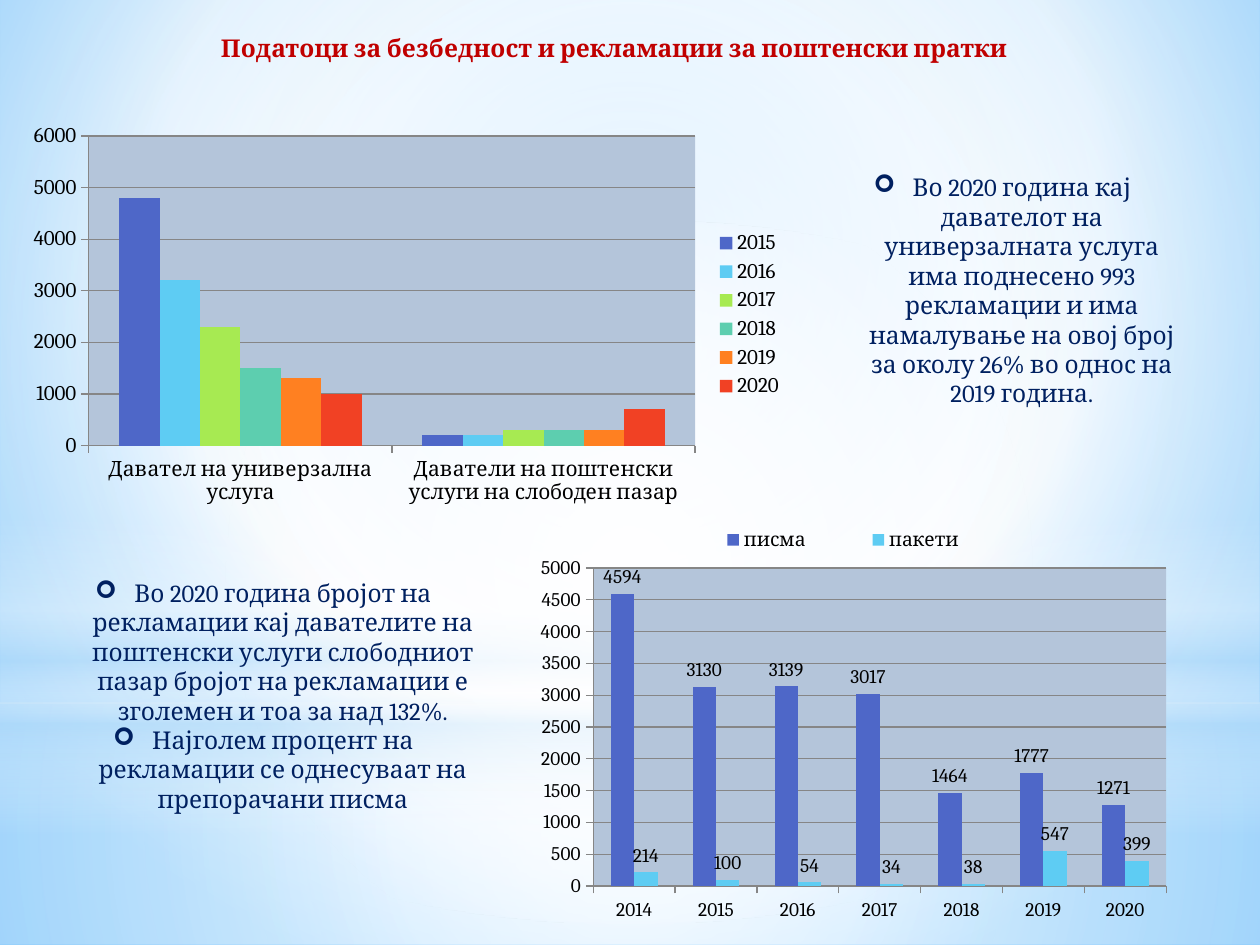
from lxml import etree
from pptx import Presentation
from pptx.chart.data import CategoryChartData
from pptx.dml.color import RGBColor
from pptx.enum.chart import XL_CHART_TYPE, XL_LABEL_POSITION, XL_LEGEND_POSITION, XL_TICK_MARK
from pptx.enum.shapes import MSO_SHAPE
from pptx.enum.text import PP_ALIGN
from pptx.oxml import parse_xml
from pptx.oxml.ns import qn
from pptx.util import Inches, Pt

COLUMNS = XL_CHART_TYPE.COLUMN_CLUSTERED
RECT, OVAL = MSO_SHAPE.RECTANGLE, MSO_SHAPE.OVAL
RIGHT, TOP = XL_LEGEND_POSITION.RIGHT, XL_LEGEND_POSITION.TOP
OUTSIDE = XL_LABEL_POSITION.OUTSIDE_END
TICK_OUT, TICK_NONE = XL_TICK_MARK.OUTSIDE, XL_TICK_MARK.NONE
CENTER = PP_ALIGN.CENTER
A = "http://schemas.openxmlformats.org/drawingml/2006/main"
P = "http://schemas.openxmlformats.org/presentationml/2006/main"

WIDTH, HEIGHT = 10, 7.5
THEME = {
    "font": "Cambria", "body_size": 14,
    "title": "C00000", "body": "002060", "chart_text": "000000",
    "plot": "B4C5DA", "line": "868686",
    "series": ["4E67C8", "5ECCF3", "A7EA52", "5DCEAF", "FF8021", "F14124"],
}

BACKDROP = dict(stops=[(0, "9ED5FF", 100), (60, "FFFFFF", 100), (100, "5BB9FF", 100)],
                focus=(20, 10, 20, 60))
MIDDLE = (50, 50, 50, 50)
GLOWS = [
    (RECT, (0, 74.4, 100, 25.6), dict(
        stops=[(0, "FFFFFF", 91), (37, "FFFFFF", 76), (100, "B4DCFA", 79)], focus=MIDDLE)),
    (RECT, (0, 0, 100, 74.4), dict(
        stops=[(0, "FFFFFF", 89), (48, "FFFFFF", 62), (100, "B4DCFA", 79)], focus=MIDDLE)),
    (RECT, (0, 54.9, 100, 33.3), dict(
        stops=[(0, "FFFFFF", 0), (29, "FFFFFF", 30), (45, "B4DCFA", 40),
               (55, "FFFFFF", 26), (65, "B4DCFA", 60), (100, "FFFFFF", 0)], angle=90)),
    (OVAL, (0, 23.3, 100, 74.4), dict(
        stops=[(0, "FFFFFF", 100), (56, "FFFFFF", 0)], focus=MIDDLE)),
]

TITLE = "Податоци за безбедност и рекламации за поштенски пратки"
UNIVERSAL_NOTE = [
    "Во 2020 година кај давателот на универзалната услуга има поднесено 993 рекламации "
    "и има намалување на овој број за околу 26% во однос на 2019 година.",
]
MARKET_NOTES = [
    "Во 2020 година бројот на рекламации кај давателите на поштенски услуги слободниот "
    "пазар бројот на рекламации е зголемен и тоа за над 132%.",
    "Најголем процент на рекламации се однесуваат на препорачани писма",
]
COMPLAINTS_BY_PROVIDER = {
    "categories": ["Давател на универзална услуга", "Даватели на поштенски услуги на слободен пазар"],
    "series": {"2015": (4800, 200), "2016": (3200, 200), "2017": (2300, 300),
               "2018": (1500, 300), "2019": (1300, 300), "2020": (1000, 700)},
}
COMPLAINTS_BY_ITEM = {
    "categories": [str(year) for year in range(2014, 2021)],
    "series": {"писма": (4594, 3130, 3139, 3017, 1464, 1777, 1271),
               "пакети": (214, 100, 54, 34, 38, 547, 399)},
}


def place(area):
    sides = (WIDTH, HEIGHT, WIDTH, HEIGHT)
    return [Inches(share * side / 100) for share, side in zip(area, sides)]


def rgb(code):
    return RGBColor.from_string(code)


def gradient(stops, focus=None, angle=0):
    marks = "".join(
        f'<a:gs pos="{pos * 1000}"><a:srgbClr val="{color}">'
        f'<a:alpha val="{opacity * 1000}"/></a:srgbClr></a:gs>'
        for pos, color, opacity in stops)
    if focus:
        rect = " ".join(f'{side}="{share * 1000}"' for side, share in zip("ltrb", focus))
        course = f'<a:path path="circle"><a:fillToRect {rect}/></a:path>'
    else:
        course = f'<a:lin ang="{angle * 60000}" scaled="0"/>'
    return f'<a:gradFill xmlns:a="{A}" rotWithShape="1"><a:gsLst>{marks}</a:gsLst>{course}</a:gradFill>'


def paint_background(slide, fill):
    slide.element.cSld.insert(0, parse_xml(
        f'<p:bg xmlns:p="{P}" xmlns:a="{A}"><p:bgPr>{gradient(**fill)}<a:effectLst/></p:bgPr></p:bg>'))


def add_glow(slide, outline, area, fill):
    glow = slide.shapes.add_shape(outline, *place(area))
    glow.shadow.inherit = False
    glow.line.fill.background()
    glow.fill.background()
    blank = glow.element.spPr.find(qn("a:noFill"))
    blank.getparent().replace(blank, parse_xml(gradient(**fill)))


def add_text(slide, lines, area, color=THEME["body"], bold=False, bullet=None):
    frame = slide.shapes.add_textbox(*place(area)).text_frame
    frame.word_wrap = True
    for index, line in enumerate(lines):
        paragraph = frame.add_paragraph() if index else frame.paragraphs[0]
        paragraph.alignment = CENTER
        run = paragraph.add_run()
        run.text = line
        run.font.name, run.font.size = THEME["font"], Pt(THEME["body_size"])
        run.font.bold, run.font.color.rgb = bold, rgb(color)
        if bullet:
            props = paragraph._p.get_or_add_pPr()
            props.set("marL", str(Inches(0.31)))
            props.set("indent", str(Inches(-0.31)))
            etree.SubElement(props, qn("a:buFont")).set("typeface", "Wingdings")
            etree.SubElement(props, qn("a:buChar")).set("char", bullet)


def set_layout(holder, after, box, inner=False):
    for old in holder.findall(qn("c:layout")):
        holder.remove(old)
    layout = etree.Element(qn("c:layout"))
    manual = etree.SubElement(layout, qn("c:manualLayout"))
    rules = [("layoutTarget", "inner")] if inner else []
    rules += [("xMode", "edge"), ("yMode", "edge"), *zip("xywh", box)]
    for tag, value in rules:
        etree.SubElement(manual, qn(f"c:{tag}")).set("val", str(value))
    if after is None:
        holder.insert(0, layout)
    else:
        after.addnext(layout)


def add_columns(slide, content, area, size, top, step, plot, legend, legend_box=None, labels=False):
    data = CategoryChartData(number_format="0")
    data.categories = content["categories"]
    for name, values in content["series"].items():
        data.add_series(name, values)
    chart = slide.shapes.add_chart(COLUMNS, *place(area), data).chart
    chart.has_title = False
    chart.font.name, chart.font.size = THEME["font"], Pt(size)
    chart.font.color.rgb = rgb(THEME["chart_text"])

    chart.has_legend = True
    chart.legend.position = legend
    chart.legend.include_in_layout = False
    if legend_box:
        box = chart.legend._element
        set_layout(box, box.find(qn("c:legendPos")), legend_box)

    scale = chart.value_axis
    scale.minimum_scale, scale.maximum_scale, scale.major_unit = 0, top, step
    scale.has_major_gridlines = True
    scale.major_gridlines.format.line.color.rgb = rgb(THEME["line"])
    for axis in (scale, chart.category_axis):
        axis.major_tick_mark, axis.minor_tick_mark = TICK_OUT, TICK_NONE
        axis.format.line.color.rgb = rgb(THEME["line"])

    columns = chart.plots[0]
    columns.gap_width, columns.overlap, columns.vary_by_categories = 150, 0, False
    for series, color in zip(columns.series, THEME["series"]):
        series.format.fill.solid()
        series.format.fill.fore_color.rgb = rgb(color)
        series.smooth = False if hasattr(series, "smooth") else None
    if labels:
        columns.has_data_labels = True
        columns.data_labels.show_value = True
        columns.data_labels.position = OUTSIDE

    plot_area = chart._chartSpace.chart.plotArea
    set_layout(plot_area, None, plot, inner=True)
    plot_area.append(parse_xml(
        f'<c:spPr xmlns:c="http://schemas.openxmlformats.org/drawingml/2006/chart" xmlns:a="{A}">'
        f'<a:solidFill><a:srgbClr val="{THEME["plot"]}"/></a:solidFill></c:spPr>'))


def main():
    deck = Presentation()
    deck.slide_width, deck.slide_height = Inches(WIDTH), Inches(HEIGHT)
    slide = deck.slides.add_slide(deck.slide_layouts[6])
    paint_background(slide, BACKDROP)
    for outline, area, fill in GLOWS:
        add_glow(slide, outline, area, fill)
    add_text(slide, [TITLE], (1.5, 2.8, 94.5, 4.5), color=THEME["title"], bold=True)
    add_columns(slide, COMPLAINTS_BY_PROVIDER, (1.5, 12.3, 61.7, 42), size=12, top=6000, step=1000,
                plot=(0.09, 0.05, 0.78, 0.78), legend=RIGHT)
    add_text(slide, UNIVERSAL_NOTE, (64.2, 17.6, 30.7, 26.5), bullet="➢")
    add_text(slide, MARKET_NOTES, (2.8, 60.5, 36.2, 26.5), bullet="➢")
    add_columns(slide, COMPLAINTS_BY_ITEM, (36.6, 53.2, 58.3, 46.1), size=11, top=5000, step=500,
                plot=(0.18, 0.15, 0.78, 0.73), legend=TOP, legend_box=(0.28, 0.04, 0.48, 0.09),
                labels=True)
    deck.save("out.pptx")


if __name__ == "__main__":
    main()
